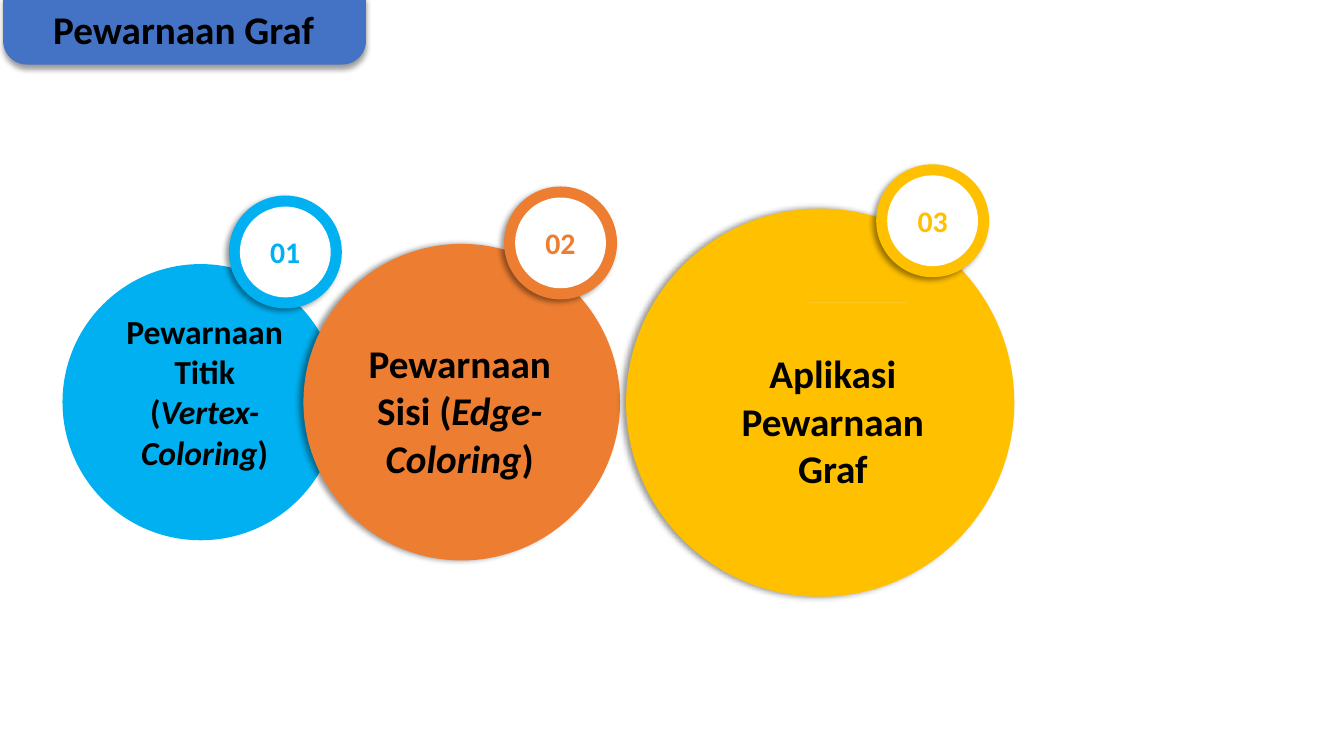
from lxml import etree
from pptx import Presentation
from pptx.dml.color import RGBColor
from pptx.enum.shapes import MSO_SHAPE as Shape
from pptx.enum.text import MSO_ANCHOR as Anchor, MSO_AUTO_SIZE as AutoSize, PP_ALIGN as Align
from pptx.oxml import parse_xml
from pptx.util import Inches, Pt

COLORS = {"blue": "00B0F0", "orange": "ED7D31", "gold": "FFC000",
          "white": "FFFFFF", "black": "000000", "banner": "4472C4"}
NS = "http://schemas.openxmlformats.org/drawingml/2006/main"


def paint(shape, color, shadow_angle=None):
    """Fill without outline, with a soft shadow cast at the given angle."""
    shape.shadow.inherit = False
    shape.fill.solid()
    shape.fill.fore_color.rgb = RGBColor.from_string(COLORS[color])
    shape.line.fill.background()
    if shadow_angle is not None:
        effects = shape._element.spPr.find(f"{{{NS}}}effectLst")
        effects.append(parse_xml(
            f'<a:outerShdw xmlns:a="{NS}" blurRad="{Pt(4)}" dist="{Pt(3)}" '
            f'dir="{shadow_angle * 60000}" algn="ctr" rotWithShape="0">'
            f'<a:srgbClr val="{COLORS["black"]}"><a:alpha val="40000"/></a:srgbClr>'
            '</a:outerShdw>'))


def write(para, spans, size, color, align):
    """Add bold spans given as (text, italic) pairs."""
    para.alignment = align
    for text, italic in spans:
        span = para.add_run()
        span.text = text
        span.font.color.rgb = RGBColor.from_string(COLORS[color])
        look = {"name": "Calibri", "size": Pt(size), "bold": True, "italic": italic}
        for key, value in look.items():
            setattr(span.font, key, value)


deck = Presentation()
deck.slide_width, deck.slide_height = Inches(13.33), Inches(7.5)
page = deck.slides.add_slide(deck.slide_layouts[6])

# Topic circles: left, top, diameter, colour, shadow angle
for left, top, size, color, angle in [
        (0.62, 2.62, 2.74, "blue", None),
        (3.01, 2.42, 3.14, "orange", 180),
        (6.21, 2.07, 3.85, "gold", 180)]:
    circle = page.shapes.add_shape(Shape.OVAL, Inches(left), Inches(top),
                                   Inches(size), Inches(size))
    paint(circle, color, angle)

# Number badges: a coloured ring around a white disc
RING, DISC = 1.12, 0.9
inset = (RING - DISC) / 2
for number, left, top, color in [("01", 2.27, 1.94, "blue"),
                                 ("02", 5, 1.85, "orange"),
                                 ("03", 8.69, 1.63, "gold")]:
    badge = page.shapes.add_group_shape()
    ring = badge.shapes.add_shape(Shape.OVAL, Inches(left), Inches(top),
                                  Inches(RING), Inches(RING))
    paint(ring, color, 135)
    disc = badge.shapes.add_shape(Shape.OVAL, Inches(left + inset), Inches(top + inset),
                                  Inches(DISC), Inches(DISC))
    paint(disc, "white")
    disc.text_frame.vertical_anchor = Anchor.MIDDLE
    write(disc.text_frame.paragraphs[0], [(number, False)], 21.3, color, Align.CENTER)

# House icon: walls with a door, chimney, roof
house_parts = [
    [(8.22, 3.25), (8.24, 3.27), (8.4, 3.27), (8.4, 3.14), (8.42, 3.11), (8.49, 3.11),
     (8.52, 3.14), (8.52, 3.27), (8.69, 3.27), (8.71, 3.25), (8.71, 3), (8.47, 2.79),
     (8.22, 3)],
    [(8.73, 2.75), (8.66, 2.75), (8.66, 2.82), (8.73, 2.88)],
    [(8.13, 2.98), (8.16, 3), (8.2, 2.98), (8.47, 2.75), (8.73, 2.98), (8.77, 3),
     (8.8, 2.98), (8.47, 2.67)],
]
builder = page.shapes.build_freeform(*house_parts[0][0], scale=Inches(1))
for index, points in enumerate(house_parts):
    if index:
        builder.move_to(*points[0])
    builder.add_line_segments(points[1:], close=True)
paint(builder.convert_to_shape(), "white", 45)

banner = page.shapes.add_shape(Shape.ROUND_2_SAME_RECTANGLE, Inches(0.03), Inches(-0.03),
                               Inches(3.6), Inches(0.67))
banner.rotation = 180
banner.adjustments[0] = 0.352
paint(banner, "banner", 90)

# Labels: box, side and top insets, left indent, size, alignment, spans
labels = [
    ((6.9, 3.44, 2.72, 1.48), (0.08, 0.03), 0, 28, Align.CENTER,
     [("Aplikasi Pewarnaan Graf", False)]),
    ((0.66, 3.05, 2.24, 1.68), (0.07, 0.03), 0.5, 24, Align.CENTER,
     [("Pewarnaan Titik (", False), ("Vertex-Coloring", True), (")", False)]),
    ((3.29, 3.34, 2.54, 1.48), (0.07, 0.03), 0, 28, Align.CENTER,
     [("Pewarnaan Sisi (", False), ("Edge-Coloring", True), (")", False)]),
    ((-0.07, 0, 3.37, 0.57), (0.1, 0.05), 0.5, 28, Align.LEFT,
     [("Pewarnaan Graf", False)]),
]
for place, (side, edge), indent, size, align, spans in labels:
    box = page.shapes.add_textbox(*map(Inches, place))
    frame = box.text_frame
    layout = {"word_wrap": True, "auto_size": AutoSize.SHAPE_TO_FIT_TEXT,
              "margin_left": Inches(side), "margin_right": Inches(side),
              "margin_top": Inches(edge), "margin_bottom": Inches(edge)}
    for key, value in layout.items():
        setattr(frame, key, value)
    para = frame.paragraphs[0]
    if indent:
        para._p.get_or_add_pPr().set("marL", str(Inches(indent)))
    write(para, spans, size, "black", align)

deck.save("out.pptx")
